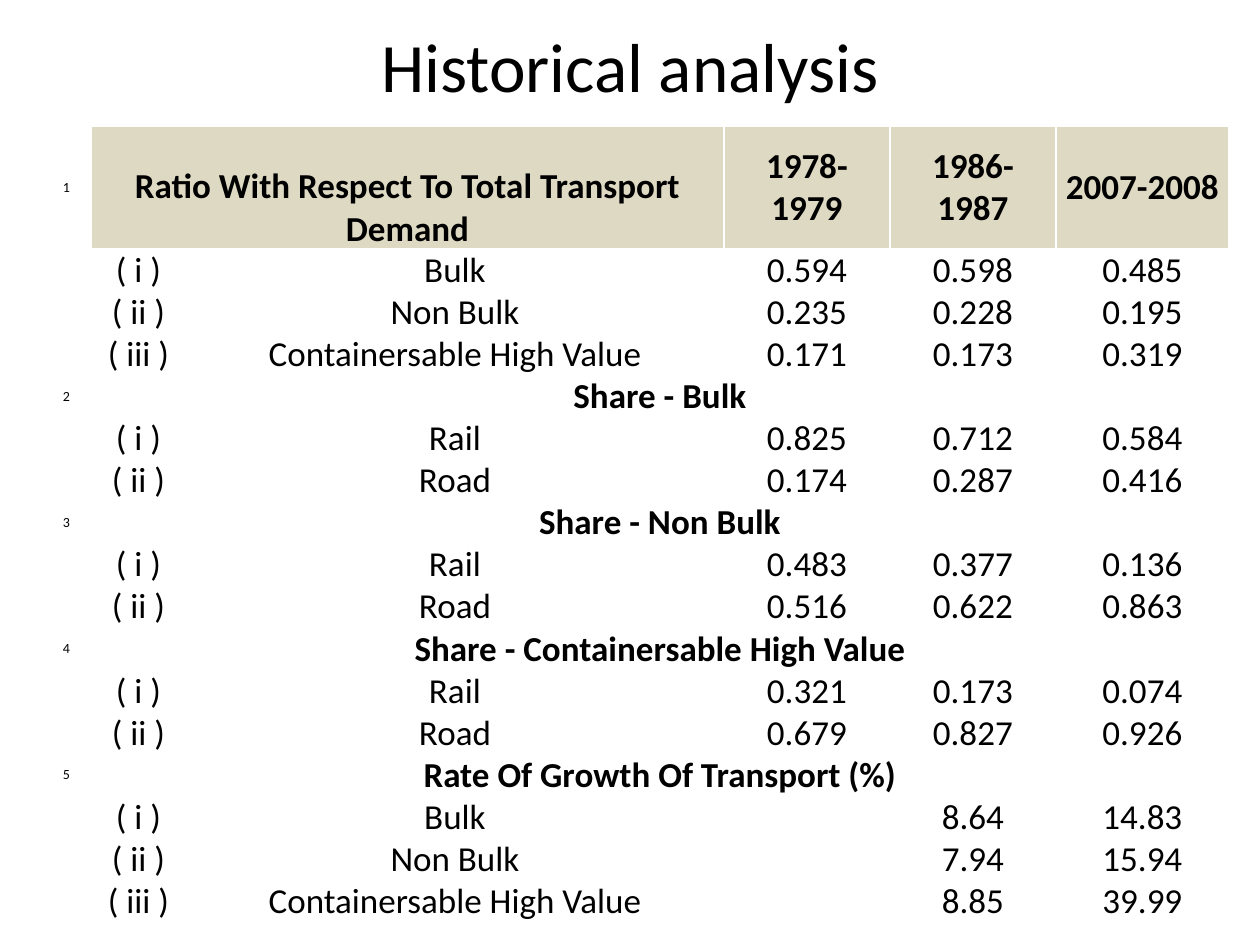
import pptx
import pptx.dml.color
import pptx.enum.text
import pptx.util

PX = 914400 // 126
COLORS = {"text": "000000", "header": "DDD9C3"}
COLUMN_WIDTHS = [49, 95, 538, 166, 166, 173]
HEADER_HEIGHT, ROW_HEIGHT = 122, 40
YEARS = ["1978-1979", "1986-1987", "2007-2008"]
NUMERALS = ["( i )", "( ii )", "( iii )"]
SECTIONS = [
    ("Ratio With Respect To Total Transport Demand", [
        ("Bulk", "0.594", "0.598", "0.485"),
        ("Non Bulk", "0.235", "0.228", "0.195"),
        ("Containersable High Value", "0.171", "0.173", "0.319")]),
    ("Share - Bulk", [
        ("Rail", "0.825", "0.712", "0.584"),
        ("Road", "0.174", "0.287", "0.416")]),
    ("Share - Non Bulk", [
        ("Rail", "0.483", "0.377", "0.136"),
        ("Road", "0.516", "0.622", "0.863")]),
    ("Share - Containersable High Value", [
        ("Rail", "0.321", "0.173", "0.074"),
        ("Road", "0.679", "0.827", "0.926")]),
    ("Rate Of Growth Of Transport (%)", [
        ("Bulk", "", "8.64", "14.83"),
        ("Non Bulk", "", "7.94", "15.94"),
        ("Containersable High Value", "", "8.85", "39.99")]),
]


def format_paragraph(paragraph, size, bold=False):
    paragraph.alignment = pptx.enum.text.PP_ALIGN.CENTER
    paragraph.font.name = "Calibri"
    paragraph.font.size = pptx.util.Pt(size)
    paragraph.font.bold = bold
    paragraph.font.color.rgb = pptx.dml.color.RGBColor.from_string(COLORS["text"])


presentation = pptx.Presentation()
presentation.slide_width = 1260 * PX
presentation.slide_height = 945 * PX
slide = presentation.slides.add_slide(presentation.slide_layouts[6])

title = slide.shapes.add_textbox(63 * PX, 21 * PX, 1134 * PX, 88 * PX)
title.text_frame.word_wrap = True
title.text_frame.vertical_anchor = pptx.enum.text.MSO_ANCHOR.MIDDLE
title.text_frame.text = "Historical analysis"
format_paragraph(title.text_frame.paragraphs[0], 39.6)

# Each section is a heading row followed by its numbered rows.
rows = []
heading_rows = []
for number, (heading, entries) in enumerate(SECTIONS, start=1):
    heading_rows.append(len(rows))
    years = YEARS if number == 1 else [""] * len(YEARS)
    rows.append([str(number), heading, "", *years])
    for numeral, entry in zip(NUMERALS, entries):
        rows.append(["", numeral, *entry])

table = slide.shapes.add_table(
    len(rows), len(COLUMN_WIDTHS), 42 * PX, 126 * PX, sum(COLUMN_WIDTHS) * PX,
    (HEADER_HEIGHT + ROW_HEIGHT * (len(rows) - 1)) * PX).table
table.first_row = False
table.horz_banding = False
for column, width in zip(table.columns, COLUMN_WIDTHS):
    column.width = width * PX

for row_index, row in enumerate(rows):
    table.rows[row_index].height = (ROW_HEIGHT if row_index else HEADER_HEIGHT) * PX
    for column_index, text in enumerate(row):
        cell = table.cell(row_index, column_index)
        cell.margin_left = cell.margin_right = 9 * PX
        cell.margin_top = cell.margin_bottom = 0
        cell.vertical_anchor = pptx.enum.text.MSO_ANCHOR.MIDDLE
        if row_index == 0 and column_index > 0:
            cell.fill.solid()
            cell.fill.fore_color.rgb = pptx.dml.color.RGBColor.from_string(COLORS["header"])
        else:
            cell.fill.background()
        cell.text = text
        is_number = column_index == 0
        format_paragraph(cell.text_frame.paragraphs[0], 8 if is_number else 20,
                         row_index in heading_rows and not is_number)

for row_index in heading_rows:
    last_column = 5 if row_index else 2
    table.cell(row_index, 1).merge(table.cell(row_index, last_column))
table.cell(0, 1).margin_top = 39 * PX

presentation.save("out.pptx")
